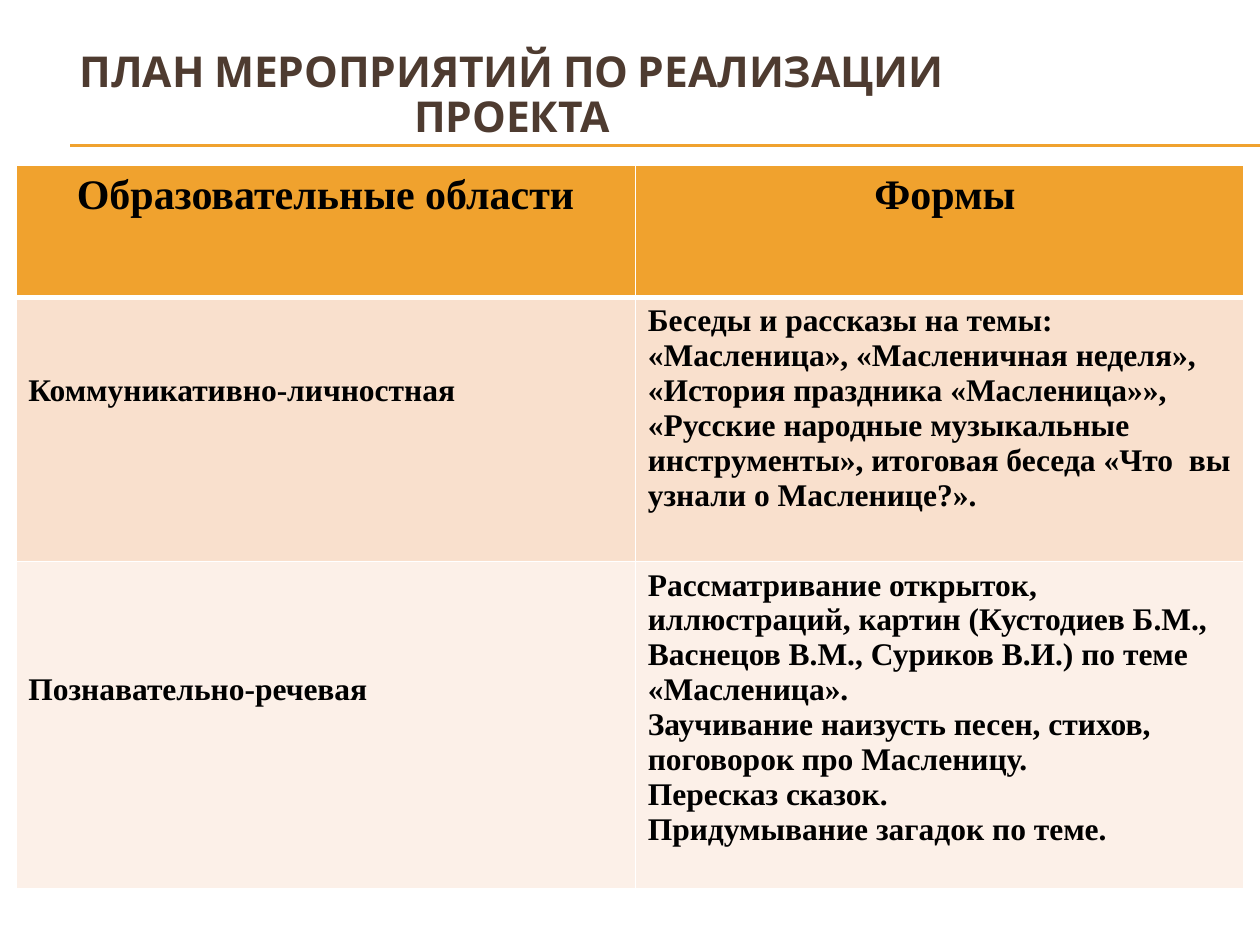
from dataclasses import dataclass

from lxml.etree import SubElement
from pptx import Presentation
from pptx.dml.color import RGBColor
from pptx.enum.shapes import MSO_CONNECTOR
from pptx.enum.text import MSO_ANCHOR, MSO_AUTO_SIZE, PP_ALIGN
from pptx.oxml.ns import qn
from pptx.util import Pt


@dataclass(frozen=True)
class Theme:
    accent: str = "F0A22E"
    title: str = "4E3B30"
    text: str = "000000"
    border: str = "FFFFFF"
    bands: tuple = ("F9E0CD", "FCF0E8")
    title_font: str = "Cabin"
    body_font: str = "Times New Roman"
    title_size: float = 24.3
    header_size: float = 24
    body_size: float = 18


THEME = Theme()
BODY_LINE = 19.93  # height of one body line

TITLE = ["ПЛАН МЕРОПРИЯТИЙ ПО РЕАЛИЗАЦИИ", "ПРОЕКТА"]
HEADERS = ["Образовательные области", " Формы"]
AREAS = [
    ("Коммуникативно-личностная", 2, [
        "Беседы и рассказы на темы: «Масленица», «Масленичная неделя», "
        "«История праздника «Масленица»», «Русские народные музыкальные "
        "инструменты», итоговая беседа «Что  вы узнали о Масленице?».",
    ]),
    ("Познавательно-речевая", 3, [
        "Рассматривание открыток, иллюстраций, картин (Кустодиев Б.М., "
        "Васнецов В.М., Суриков В.И.) по теме «Масленица».",
        "Заучивание наизусть песен, стихов, поговорок про Масленицу.",
        "Пересказ сказок.",
        "Придумывание загадок по теме.",
    ]),
]


def write_text(frame, lines, *, font=THEME.body_font, size=THEME.body_size,
               color=THEME.text, align=PP_ALIGN.LEFT, spacing=None):
    for index, line in enumerate(lines):
        paragraph = frame.paragraphs[0] if index == 0 else frame.add_paragraph()
        paragraph.alignment = align
        if spacing:
            paragraph.line_spacing = spacing
        run = paragraph.add_run()
        run.text = line
        run.font.name = font
        run.font.size = Pt(size)
        run.font.bold = True
        run.font.color.rgb = RGBColor.from_string(color)


def place_title(slide, left, top, width, height):
    title = slide.shapes.title
    title.left, title.top, title.width, title.height = map(Pt, (left, top, width, height))
    frame = title.text_frame
    frame.word_wrap = True
    frame.auto_size = MSO_AUTO_SIZE.NONE
    frame.vertical_anchor = MSO_ANCHOR.BOTTOM
    frame.margin_bottom = Pt(21)
    write_text(frame, TITLE, font=THEME.title_font, size=THEME.title_size,
               color=THEME.title, align=PP_ALIGN.CENTER, spacing=0.88)
    # A right indent moves the first line left of centre
    frame.paragraphs[0]._p.get_or_add_pPr().set("marR", str(Pt(147)))


def place_rule(slide, left, top, width):
    """Draw the double line under the title."""
    for y in (top, top + 0.7):
        line = slide.shapes.add_connector(
            MSO_CONNECTOR.STRAIGHT, Pt(left), Pt(y), Pt(left + width), Pt(y))
        line.line.color.rgb = RGBColor.from_string(THEME.accent)
        line.line.width = Pt(0.75)
        SubElement(line._element.spPr, qn("a:effectLst"))


def format_cell(cell, fill, bottom_width=1):
    properties = cell._tc.get_or_add_tcPr()
    for side, width in (("L", 1), ("R", 1), ("T", 1), ("B", bottom_width)):
        border = SubElement(properties, qn(f"a:ln{side}"), w=str(Pt(width)))
        solid = SubElement(border, qn("a:solidFill"))
        SubElement(solid, qn("a:srgbClr"), val=THEME.border)
    cell.fill.solid()
    cell.fill.fore_color.rgb = RGBColor.from_string(fill)


def place_table(slide, left, top, columns, rows):
    table = slide.shapes.add_table(
        len(rows), len(columns), Pt(left), Pt(top), Pt(sum(columns)), Pt(sum(rows))).table
    table.horz_banding = False
    for column, width in zip(table.columns, columns):
        column.width = Pt(width)
    for row, height in zip(table.rows, rows):
        row.height = Pt(height)

    for index, header in enumerate(HEADERS):
        cell = table.cell(0, index)
        format_cell(cell, THEME.accent, bottom_width=3)
        write_text(cell.text_frame, [header], size=THEME.header_size, align=PP_ALIGN.CENTER)

    for index, (area, lines_above, forms) in enumerate(AREAS):
        for column, lines in enumerate(([area], forms)):
            cell = table.cell(index + 1, column)
            format_cell(cell, THEME.bands[index])
            write_text(cell.text_frame, lines)
        table.cell(index + 1, 0).margin_top = Pt(round(3.6 + lines_above * BODY_LINE, 2))


def main():
    presentation = Presentation()
    presentation.slide_width, presentation.slide_height = Pt(720), Pt(540)
    slide = presentation.slides.add_slide(presentation.slide_layouts[5])
    place_rule(slide, 40.3, 82.8, 679.7)
    place_title(slide, 24, 36, 684, 66)
    place_table(slide, 9, 94.5, columns=(354, 348), rows=(75.5, 151, 187))
    presentation.save("out.pptx")


if __name__ == "__main__":
    main()
